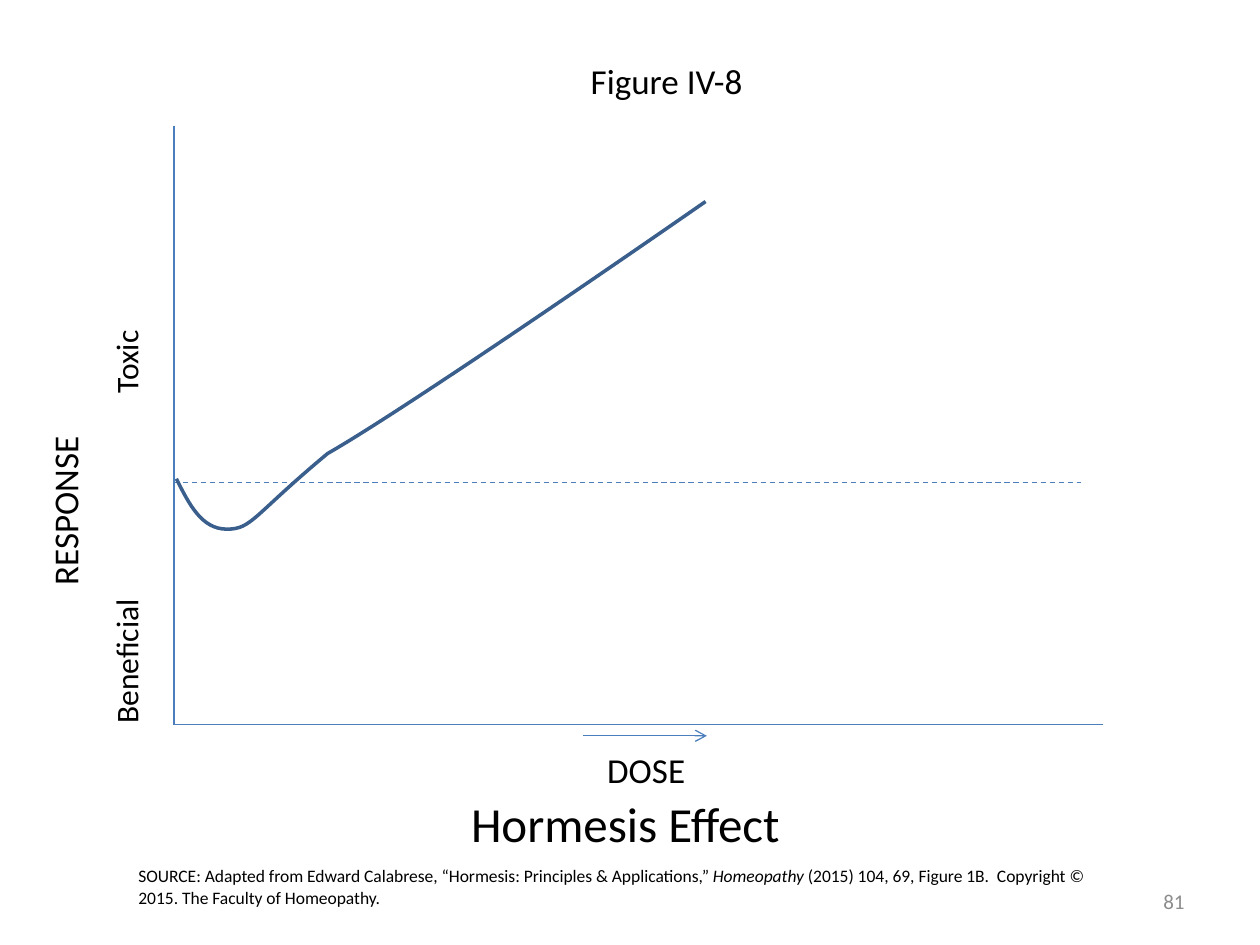
from lxml.etree import SubElement
from pptx import Presentation
from pptx.dml.color import RGBColor as RGB
from pptx.enum.dml import MSO_LINE as DASH
from pptx.enum.shapes import MSO_CONNECTOR as CONN
from pptx.enum.text import MSO_ANCHOR as ANCHOR, MSO_AUTO_SIZE as FIT, PP_ALIGN as ALIGN
from pptx.oxml.ns import qn
from pptx.util import Inches, Pt

THEME = {
    "font": "Calibri",
    "text": RGB(0x00, 0x00, 0x00), "muted": RGB(0x8C, 0x8C, 0x8C),
    "axis": RGB(0x4B, 0x7E, 0xBC), "curve": RGB(0x3A, 0x5F, 0x8C),
    "title": 28, "label": 20, "zone": 18, "number": 12, "source": 10,
    "thin": Pt(0.75), "thick": Pt(2),
}

prs = Presentation()
prs.slide_width, prs.slide_height = Inches(10), Inches(7.5)
s = prs.slides.add_slide(prs.slide_layouts[6])

# Grid of 100 columns by 75 rows
COL, ROW = prs.slide_width / 100, prs.slide_height / 75
LEFT, TOP, BASE, ZERO = 13.8, 10, 57.5, 38.3


def add_line(x1, y1, x2, y2):
    ln = s.shapes.add_connector(CONN.STRAIGHT, int(x1 * COL), int(y1 * ROW),
                                int(x2 * COL), int(y2 * ROW))
    ln.line.color.rgb = THEME["axis"]
    ln.line.width = THEME["thin"]
    SubElement(ln._element.spPr, qn("a:effectLst"))
    return ln


def add_text(box, runs, size, color="text", wrap=True, rotation=0):
    x, y, w, h = box
    sp = s.shapes.add_textbox(int(x * COL), int(y * ROW), int(w * COL), int(h * ROW))
    sp.rotation = rotation
    tf = sp.text_frame
    tf.word_wrap = wrap
    tf.auto_size = FIT.SHAPE_TO_FIT_TEXT
    for text, italic in runs:
        r = tf.paragraphs[0].add_run()
        r.text = text
        r.font.name, r.font.size = THEME["font"], Pt(THEME[size])
        r.font.color.rgb = THEME[color]
        r.font.italic = italic
    return tf


# Axes
add_line(LEFT, BASE, 87.5, BASE)
add_line(LEFT, TOP, LEFT, BASE)

# Zero-response line
add_line(LEFT, ZERO, 85.8, ZERO).line.dash_style = DASH.DASH

# Dose direction arrow
arrow = add_line(46.3, 58.4, 56.1, 58.4)
SubElement(arrow.line._get_or_add_ln(), qn("a:tailEnd"), type="arrow")

# Response curve: a start point, then three points for each Bezier segment
start = (13.9, ZERO)
points = [(14.7, 40.3), (15.6, 42.3), (17.7, 41.9),
          (19.8, 41.6), (20.1, 40.6), (26.4, 36.3),
          (32.7, 32), (55.5, 15.9), (55.5, 15.9)]
builder = s.shapes.build_freeform(*start, scale=(COL, ROW))
builder.add_line_segments(points, close=False)
curve = builder.convert_to_shape()
curve.shadow.inherit = False
curve.fill.background()
curve.line.color.rgb = THEME["curve"]
curve.line.width = THEME["thick"]
outline = next(curve._element.iter(qn("a:path")))
steps = outline.findall(qn("a:lnTo"))
for i in range(0, len(steps), 3):
    bezier = SubElement(outline, qn("a:cubicBezTo"))
    for step in steps[i:i + 3]:
        bezier.append(step[0])
        outline.remove(step)

# Headings and axis labels
for box, text, size, wrap, rotation in [
    ((45.9, 4.2, 14.3, 4.4), "Figure IV-8", "label", False, 0),
    ((47.2, 58.9, 9.8, 4.4), "DOSE", "label", True, 0),
    ((-7.8, 32.3, 25.9, 4.4), "RESPONSE", "label", True, 270),
    ((4, 50.4, 12, 4), "Beneficial", "zone", False, 270),
    ((6.5, 26.7, 7, 4), "Toxic", "zone", False, 270),
    ((36.4, 62.5, 29.6, 5.7), "Hormesis Effect", "title", True, 0),
]:
    add_text(box, [(text, False)], size, wrap=wrap, rotation=rotation)

# Source note
add_text((10, 68.2, 79.2, 7.4), [
    ("SOURCE: Adapted from Edward Calabrese, “Hormesis: Principles & Applications,” ", False),
    ("Homeopathy", True),
    (" (2015) 104, 69, Figure 1B.  Copyright © 2015. The Faculty of Homeopathy.", False),
], "source")

# Slide number
tf = add_text((71.7, 69.5, 23.3, 4), [("81", False)], "number", "muted")
tf.auto_size = FIT.NONE
tf.vertical_anchor = ANCHOR.MIDDLE
tf.paragraphs[0].alignment = ALIGN.RIGHT

prs.save("out.pptx")
